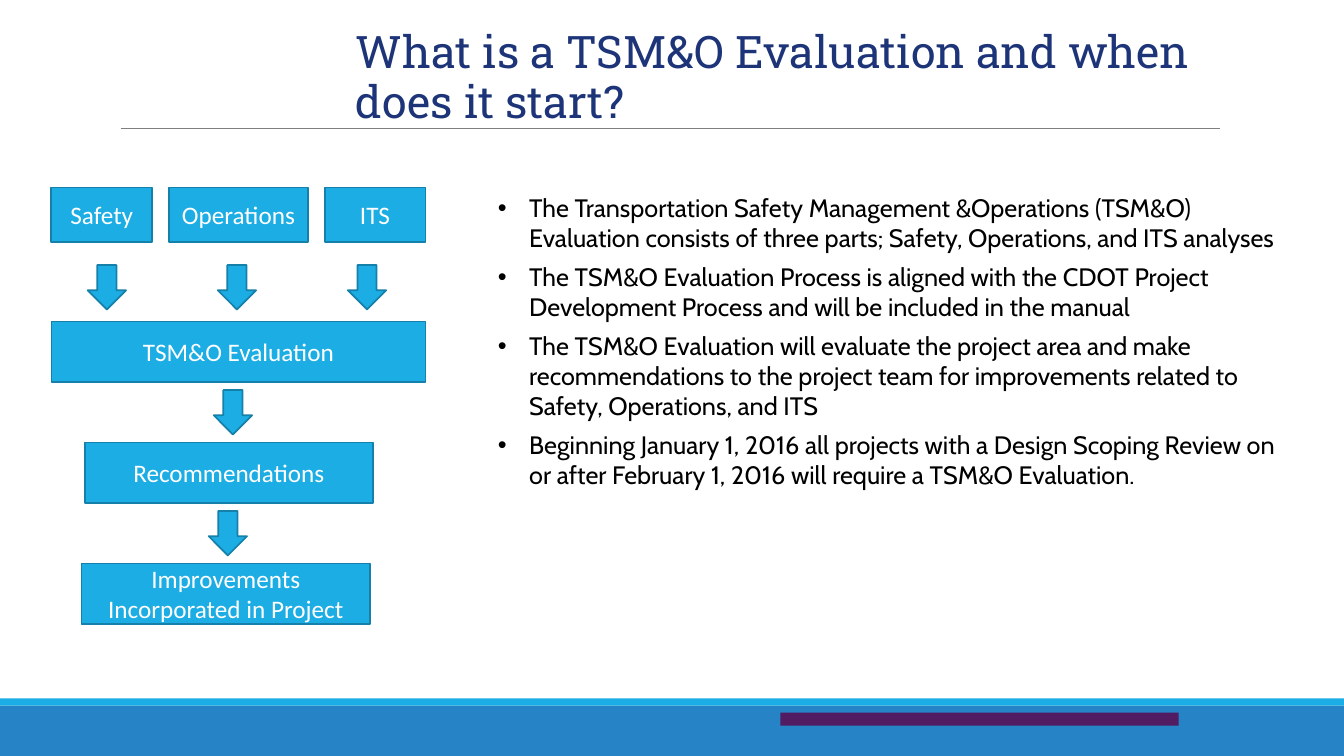
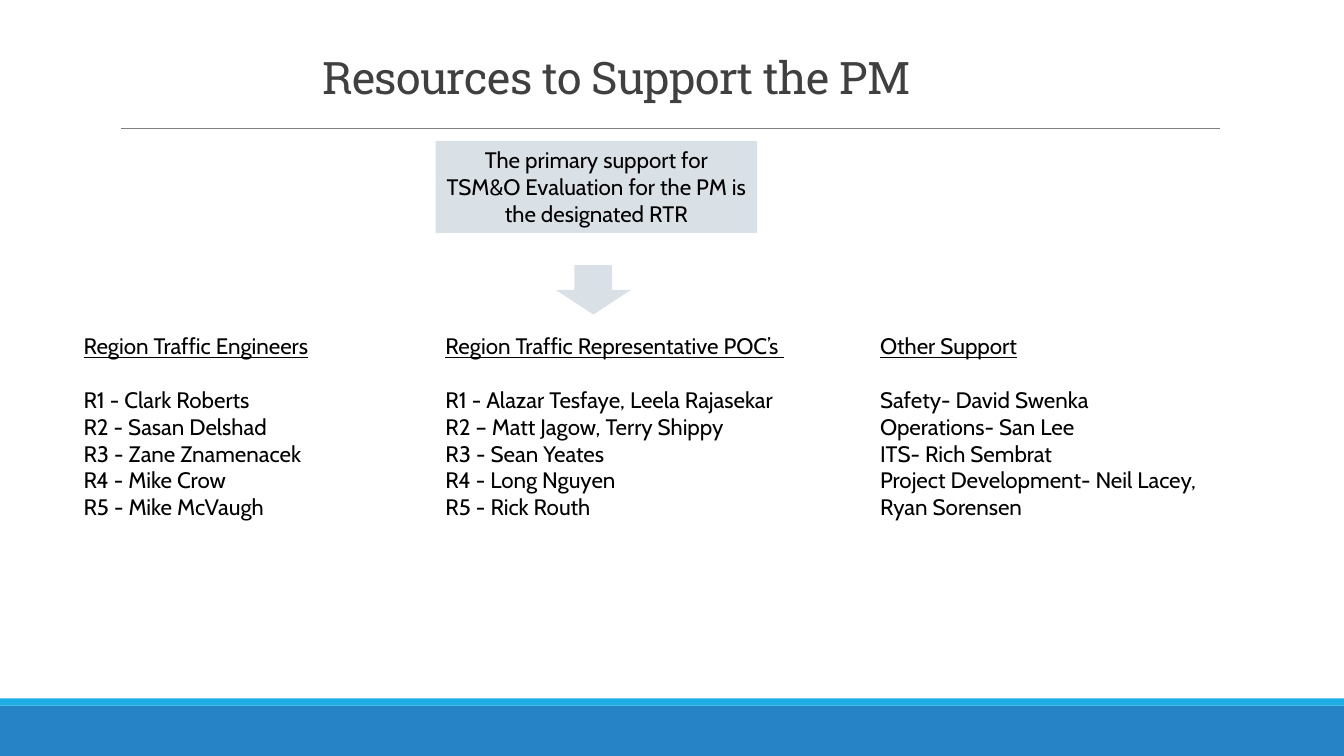
from lxml import etree
from pptx import Presentation
from pptx.dml.color import RGBColor
from pptx.enum.shapes import MSO_CONNECTOR, MSO_SHAPE
from pptx.enum.text import MSO_ANCHOR, PP_ALIGN
from pptx.oxml.ns import qn
from pptx.util import Inches, Pt

COLOURS = {
    "band": "2683C6", "accent": "1CADE4", "outline": "1580A9", "rule": "808080",
    "purple": "511C61", "navy": "1D3479", "grey": "404040", "pale": "D9E0E6",
    "black": "000000", "white": "FFFFFF",
}
TITLE_FONT, BODY_FONT, DIAGRAM_FONT = "Roboto Slab", "Cabin", "Calibri"

EVALUATION_TITLE = "What is a TSM&O Evaluation and when does it start?"
EVALUATION_POINTS = [
    "The Transportation Safety Management &Operations (TSM&O) Evaluation consists "
    "of three parts; Safety, Operations, and ITS analyses",
    "The TSM&O Evaluation Process is aligned with the CDOT Project Development "
    "Process and will be included in the manual",
    "The TSM&O Evaluation will evaluate the project area and make recommendations "
    "to the project team for improvements related to Safety, Operations, and ITS",
    "Beginning January 1, 2016 all projects with a Design Scoping Review on or "
    "after February 1, 2016 will require a TSM&O Evaluation.",
]
ANALYSES = [("Safety", 1), ("Operations", 1.38), ("ITS", 1)]  # label, width
STEPS = [  # label, left, width, left of the arrow below
    ("TSM&O Evaluation", 0.51, 3.71, 2.12),
    ("Recommendations", 0.84, 2.86, 2.07),
    ("Improvements Incorporated in Project", 0.81, 2.86, None),
]

RESOURCES_TITLE = "Resources to Support the PM"
PRIMARY_SUPPORT = ("The primary support for TSM&O Evaluation for the PM "
                   "is the designated RTR")
CONTACTS = [  # left, width, heading, people
    (0.73, 3.15, "Region Traffic Engineers",
     ["R1 - Clark Roberts", "R2 - Sasan Delshad", "R3 - Zane Znamenacek",
      "R4 - Mike Crow", "R5 - Mike McVaugh"]),
    (4.32, 4.06, "Region Traffic Representative POC’s ",
     ["R1 - Alazar Tesfaye, Leela Rajasekar", "R2 – Matt Jagow, Terry Shippy",
      "R3 - Sean Yeates", "R4 - Long Nguyen", "R5 - Rick Routh"]),
    (8.63, 3.62, "Other Support",
     ["Safety- David Swenka", "Operations- San Lee", "ITS- Rich Sembrat",
      "Project Development- Neil Lacey,", "Ryan Sorensen"]),
]


def colour(name):
    return RGBColor.from_string(COLOURS[name])


def add_block(slide, kind, left, top, width, height, fill, outline=None):
    shape = slide.shapes.add_shape(
        kind, Inches(left), Inches(top), Inches(width), Inches(height))
    shape.shadow.inherit = False
    shape.fill.solid()
    shape.fill.fore_color.rgb = colour(fill)
    if outline:
        shape.line.color.rgb = colour(outline)
        shape.line.width = Pt(1.25)
    else:
        shape.line.fill.background()
    return shape


def add_text_box(slide, left, top, width, height):
    return slide.shapes.add_textbox(
        Inches(left), Inches(top), Inches(width), Inches(height))


def write(shape, lines, font, size, ink, align=PP_ALIGN.LEFT,
          anchor=MSO_ANCHOR.TOP, bullets=False):
    """Fill the shape with one paragraph per line and return the paragraphs."""
    frame = shape.text_frame
    frame.word_wrap = True
    frame.vertical_anchor = anchor
    frame.text = "\n".join(lines)
    for paragraph in frame.paragraphs:
        if bullets:
            add_bullet(paragraph)
        paragraph.alignment = align
        paragraph.font.name = font
        paragraph.font.size = Pt(size)
        paragraph.font.color.rgb = colour(ink)
    return frame.paragraphs


def add_bullet(paragraph):
    properties = paragraph._p.get_or_add_pPr()
    indent = Inches(0.31)
    properties.set("marL", str(indent))
    properties.set("indent", str(-indent))
    etree.SubElement(properties, qn("a:buFont")).set("typeface", "Arial")
    etree.SubElement(properties, qn("a:buChar")).set("char", "•")
    paragraph.space_after = Pt(6)


def add_base_slide(presentation, title, title_box, ink, anchor, line_spacing):
    """Add a slide with the shared bands, rule and title style."""
    slide = presentation.slides.add_slide(presentation.slide_layouts[6])
    add_block(slide, MSO_SHAPE.RECTANGLE, 0, 7, 13.33, 0.5, "band")
    add_block(slide, MSO_SHAPE.RECTANGLE, 0, 6.93, 13.33, 0.07, "accent")
    rule = slide.shapes.add_connector(
        MSO_CONNECTOR.STRAIGHT, Inches(1.2), Inches(1.27), Inches(12.1), Inches(1.27))
    rule.line.color.rgb = colour("rule")
    rule.line.width = Pt(0.5)
    etree.SubElement(rule._element.spPr, qn("a:effectLst"))
    paragraph, = write(add_text_box(slide, *title_box), [title],
                       TITLE_FONT, 32, ink, anchor=anchor)
    paragraph.line_spacing = line_spacing
    return slide, paragraph


def add_flow_box(slide, label, left, top, width, height):
    box = add_block(slide, MSO_SHAPE.RECTANGLE, left, top, width, height,
                    "accent", "outline")
    write(box, [label], DIAGRAM_FONT, 18, "white",
          PP_ALIGN.CENTER, MSO_ANCHOR.MIDDLE)


def add_flow_arrow(slide, left, top):
    add_block(slide, MSO_SHAPE.DOWN_ARROW, left, top, 0.38, 0.44,
              "accent", "outline")


def build_evaluation(presentation):
    slide, _ = add_base_slide(presentation, EVALUATION_TITLE, (3.43, 0.29, 8.48, 0.98),
                              "navy", MSO_ANCHOR.MIDDLE, 0.93)
    add_block(slide, MSO_SHAPE.RECTANGLE, 7.74, 7.07, 3.95, 0.13, "purple")
    write(add_text_box(slide, 4.84, 1.86, 8.02, 4.07), EVALUATION_POINTS,
          BODY_FONT, 18, "black", bullets=True)

    _, left, full_width, _ = STEPS[0]
    gap = (full_width - sum(width for _, width in ANALYSES)) / (len(ANALYSES) - 1)
    for index, (label, width) in enumerate(ANALYSES):
        add_flow_box(slide, label, left, 1.86, width, 0.54)
        add_flow_arrow(slide, 0.87 + 1.29 * index, 2.63)
        left += width + gap

    for index, (label, left, width, arrow_left) in enumerate(STEPS):
        top = 3.19 + 1.2 * index
        add_flow_box(slide, label, left, top, width, 0.6)
        if arrow_left is not None:
            add_flow_arrow(slide, arrow_left, top + 0.68)


def build_resources(presentation):
    slide, title = add_base_slide(presentation, RESOURCES_TITLE, (3.1, 0, 7.73, 1.08),
                                  "grey", MSO_ANCHOR.BOTTOM, 0.85)
    title.runs[0]._r.get_or_add_rPr().set("spc", "-50")
    for left, width, heading, people in CONTACTS:
        paragraphs = write(add_text_box(slide, left, 3.25, width, 2.29),
                           [heading, *people], BODY_FONT, 16, "black")
        paragraphs[0].font.underline = True
        paragraphs[0].space_after = Pt(19)
    support = add_block(slide, MSO_SHAPE.RECTANGLE, 4.32, 1.4, 3.19, 0.91, "pale")
    write(support, [PRIMARY_SUPPORT], BODY_FONT, 16, "black", PP_ALIGN.CENTER)
    add_block(slide, MSO_SHAPE.DOWN_ARROW, 5.51, 2.63, 0.75, 0.49, "pale")


def main():
    presentation = Presentation()
    presentation.slide_width = Inches(13.33)
    presentation.slide_height = Inches(7.5)
    build_evaluation(presentation)
    build_resources(presentation)
    presentation.save("out.pptx")


if __name__ == "__main__":
    main()
